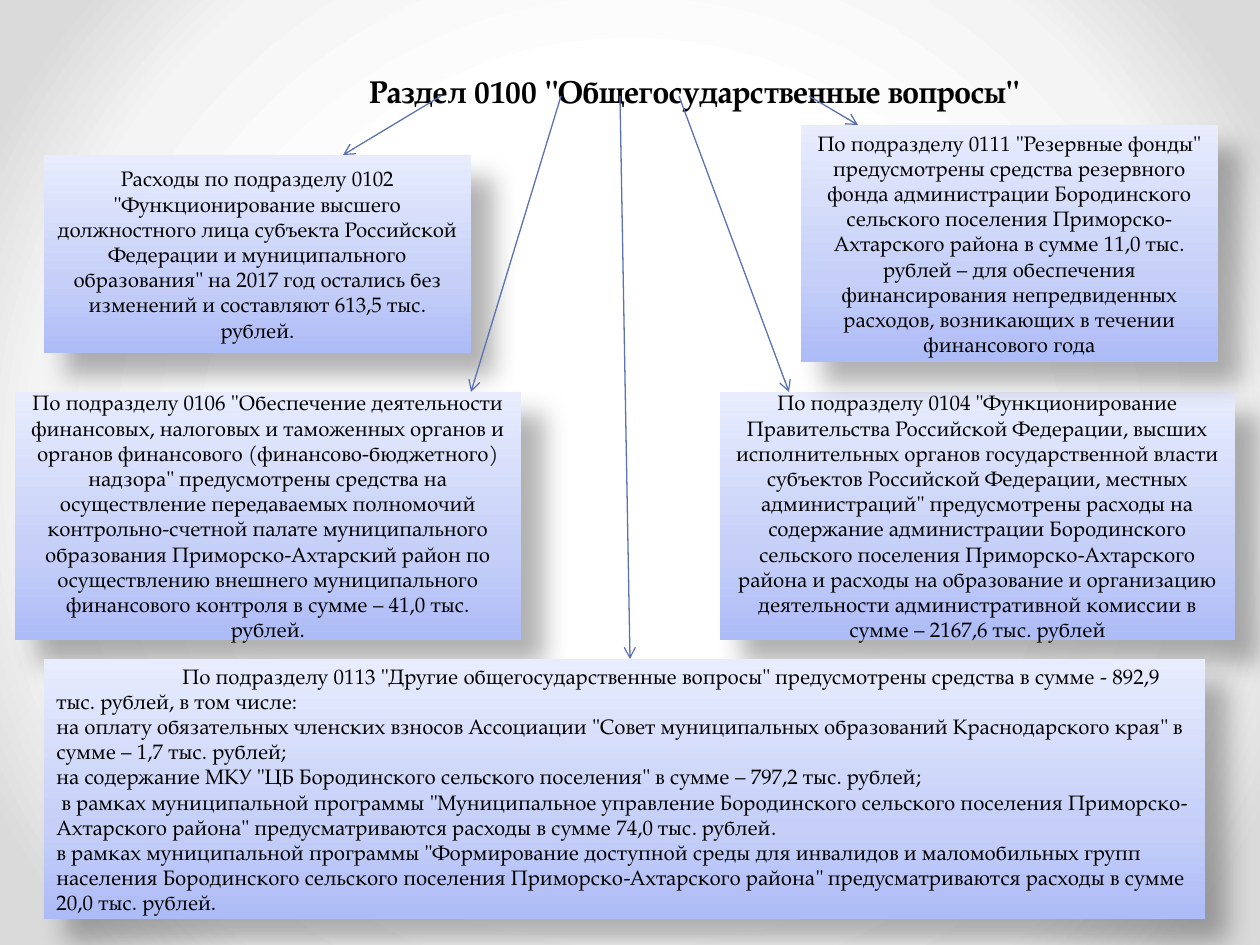
from lxml.etree import SubElement
from pptx import Presentation
from pptx.dml.color import RGBColor
from pptx.enum.shapes import MSO_CONNECTOR, MSO_SHAPE
from pptx.enum.text import MSO_ANCHOR, PP_ALIGN
from pptx.oxml import parse_xml
from pptx.oxml.ns import nsdecls, qn
from pptx.util import Pt

EMU_PER_PX = 914400 / 126
FONT = "TeX Gyre Pagella"
COLORS = {
    "text": "000000",
    "shadow": "000000",
    "arrow": "5C72B2",
    "box_bottom": "ADBBF6",
    "box_middle": "C5CFF8",
    "box_top": "E8ECFD",
    "center": "FFFFFF",
    "ring": "F4F4F4",
    "edge": "DADADA",
}
BOX_STOPS = [(0, "box_bottom"), (35, "box_middle"), (100, "box_top")]
BACKGROUND_STOPS = [(50, "center"), (76, "ring"), (92, "edge")]
BOX_DIRECTION = '<a:lin ang="16200000" scaled="0"/>'
BACKGROUND_DIRECTION = (
    '<a:path path="circle">'
    '<a:fillToRect l="50000" t="50000" r="50000" b="50000"/></a:path>'
)

TITLE = 'Раздел 0100 "Общегосударственные вопросы"'
TEXT_0102 = (
    'Расходы по подразделу 0102 "Функционирование высшего должностного лица субъекта '
    'Российской Федерации и муниципального образования" на 2017 год остались без '
    "изменений и составляют 613,5 тыс. рублей."
)
TEXT_0104 = (
    'По подразделу 0104 "Функционирование Правительства Российской Федерации, высших '
    "исполнительных органов государственной власти субъектов Российской Федерации, "
    'местных администраций" предусмотрены расходы на содержание администрации '
    "Бородинского сельского поселения Приморско-Ахтарского района и расходы на "
    "образование и организацию деятельности административной комиссии в сумме – "
    "2167,6 тыс. рублей"
)
TEXT_0106 = (
    'По подразделу 0106 "Обеспечение деятельности финансовых, налоговых и таможенных '
    'органов и органов финансового (финансово-бюджетного) надзора" предусмотрены '
    "средства на осуществление передаваемых полномочий контрольно-счетной палате "
    "муниципального образования Приморско-Ахтарский район по осуществлению внешнего "
    "муниципального финансового контроля в сумме – 41,0 тыс. рублей."
)
TEXT_0111 = (
    'По подразделу 0111 "Резервные фонды" предусмотрены средства резервного фонда '
    "администрации Бородинского сельского поселения Приморско-Ахтарского района в "
    "сумме 11,0 тыс. рублей – для обеспечения финансирования непредвиденных расходов, "
    "возникающих в течении финансового года"
)
LINES_0113 = [
    ('По подразделу 0113 "Другие общегосударственные вопросы" предусмотрены средства '
     "в сумме - 892,9 тыс. рублей, в том числе:", 126),
    ('на оплату обязательных членских взносов Ассоциации "Совет муниципальных '
     'образований Краснодарского края" в сумме – 1,7 тыс. рублей;', 0),
    ('на содержание МКУ "ЦБ Бородинского сельского поселения" в сумме – 797,2 тыс. '
     "рублей;", 0),
    ('в рамках муниципальной программы "Муниципальное управление Бородинского '
     'сельского поселения Приморско-Ахтарского района" предусматриваются расходы в '
     "сумме 74,0 тыс. рублей.", 5),
    ('в рамках муниципальной программы "Формирование доступной среды для инвалидов и '
     "маломобильных групп населения Бородинского сельского поселения "
     'Приморско-Ахтарского района" предусматриваются расходы в сумме 20,0 тыс. '
     "рублей.", 0),
]
CENTER = PP_ALIGN.CENTER
LEFT = PP_ALIGN.LEFT
BRANCHES = [
    ((44, 155, 427, 198), [(TEXT_0102, 0)], CENTER, (441, 96), (343, 155)),
    ((720, 392, 515, 248), [(TEXT_0104, 0)], CENTER, (809, 96), (858, 125)),
    ((15, 392, 506, 248), [(TEXT_0106, 0)], CENTER, (561, 96), (471, 392)),
    ((801, 125, 417, 237), [(TEXT_0111, 0)], CENTER, (679, 96), (789, 392)),
    ((44, 659, 1161, 260), LINES_0113, LEFT, (620, 96), (630, 659)),
]


def px(value):
    return round(value * EMU_PER_PX)


def set_gradient(properties, stops, direction):
    stop_xml = "".join(
        f'<a:gs pos="{position * 1000}"><a:srgbClr val="{COLORS[name]}"/></a:gs>'
        for position, name in stops
    )
    gradient = parse_xml(
        f'<a:gradFill {nsdecls("a")} rotWithShape="1">'
        f"<a:gsLst>{stop_xml}</a:gsLst>{direction}</a:gradFill>"
    )
    properties.replace(properties.find(qn("a:noFill")), gradient)


def add_shadow(shape):
    shape.shadow.inherit = False
    effects = shape.element.spPr.find(qn("a:effectLst"))
    effects.append(parse_xml(
        f'<a:outerShdw {nsdecls("a")} blurRad="{Pt(15)}" dist="{Pt(18)}" '
        f'dir="2700000" algn="tl" rotWithShape="0">'
        f'<a:srgbClr val="{COLORS["shadow"]}"><a:alpha val="30000"/></a:srgbClr>'
        f"</a:outerShdw>"
    ))


def add_run(paragraph, text, size, bold=False):
    run = paragraph.add_run()
    run.text = text
    run.font.name = FONT
    run.font.size = Pt(size)
    run.font.bold = bold
    run.font.color.rgb = RGBColor.from_string(COLORS["text"])


def add_background(slide):
    slide.background.fill.background()
    properties = slide.element.find(".//" + qn("p:bgPr"))
    set_gradient(properties, BACKGROUND_STOPS, BACKGROUND_DIRECTION)


def add_title(slide, box):
    shape = slide.shapes.add_textbox(*map(px, box))
    frame = shape.text_frame
    frame.word_wrap = True
    frame.vertical_anchor = MSO_ANCHOR.BOTTOM
    frame.margin_left = px(139)
    paragraph = frame.paragraphs[0]
    paragraph.alignment = CENTER
    add_run(paragraph, TITLE, 18, bold=True)


def add_box(slide, box, lines, alignment):
    shape = slide.shapes.add_shape(MSO_SHAPE.RECTANGLE, *map(px, box))
    shape.line.fill.background()
    shape.fill.background()
    set_gradient(shape.element.spPr, BOX_STOPS, BOX_DIRECTION)
    add_shadow(shape)
    frame = shape.text_frame
    frame.word_wrap = True
    frame.vertical_anchor = MSO_ANCHOR.MIDDLE
    for index, (text, indent) in enumerate(lines):
        paragraph = frame.add_paragraph() if index else frame.paragraphs[0]
        paragraph.alignment = alignment
        if indent:
            paragraph._p.get_or_add_pPr().set("indent", str(px(indent)))
        add_run(paragraph, text, 12)


def add_arrow(slide, start, end):
    connector = slide.shapes.add_connector(
        MSO_CONNECTOR.STRAIGHT, *map(px, start + end)
    )
    connector.line.color.rgb = RGBColor.from_string(COLORS["arrow"])
    connector.line.width = Pt(0.75)
    SubElement(connector.line._get_or_add_ln(), qn("a:tailEnd"), type="arrow")
    SubElement(connector.element.spPr, qn("a:effectLst"))


def main():
    presentation = Presentation()
    presentation.slide_width = px(1260)
    presentation.slide_height = px(945)
    slide = presentation.slides.add_slide(presentation.slide_layouts[6])
    add_background(slide)
    add_title(slide, (64, 37, 1134, 79))
    for box, lines, alignment, start, end in BRANCHES:
        add_box(slide, box, lines, alignment)
        add_arrow(slide, start, end)
    presentation.save("out.pptx")


if __name__ == "__main__":
    main()
